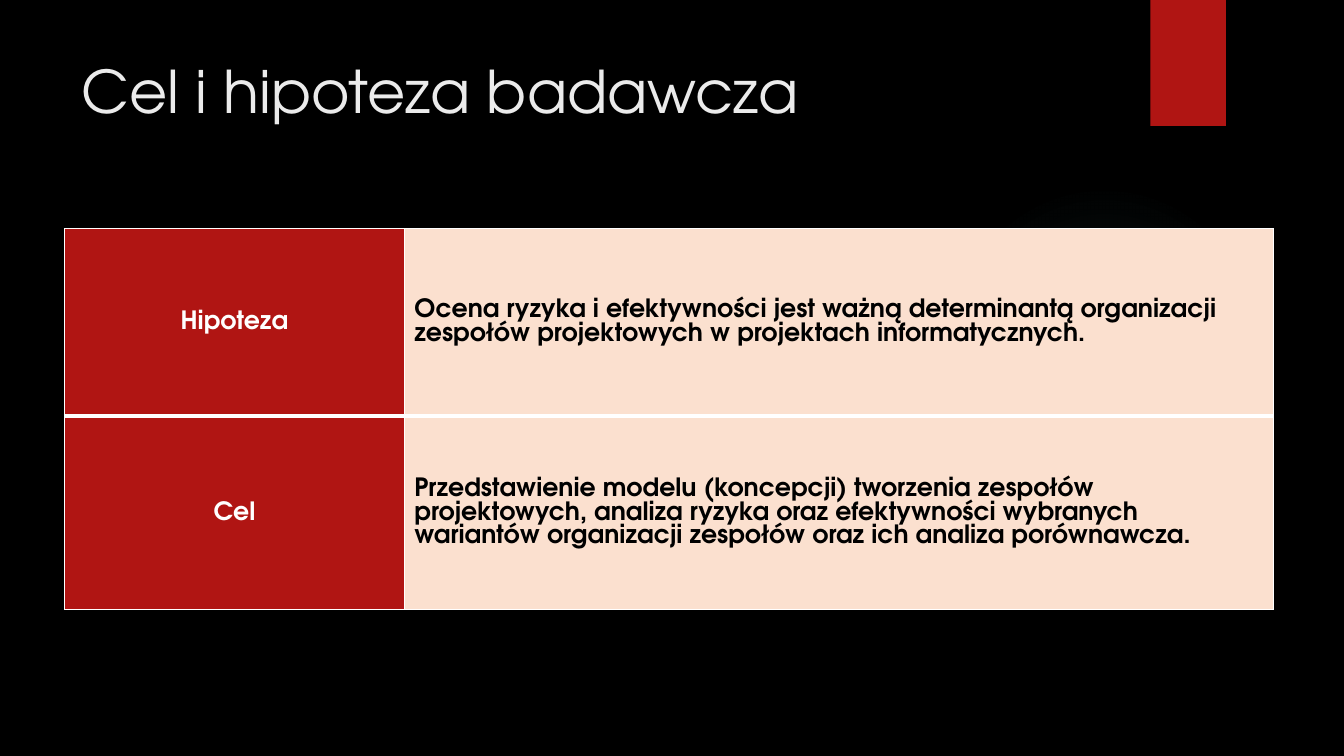
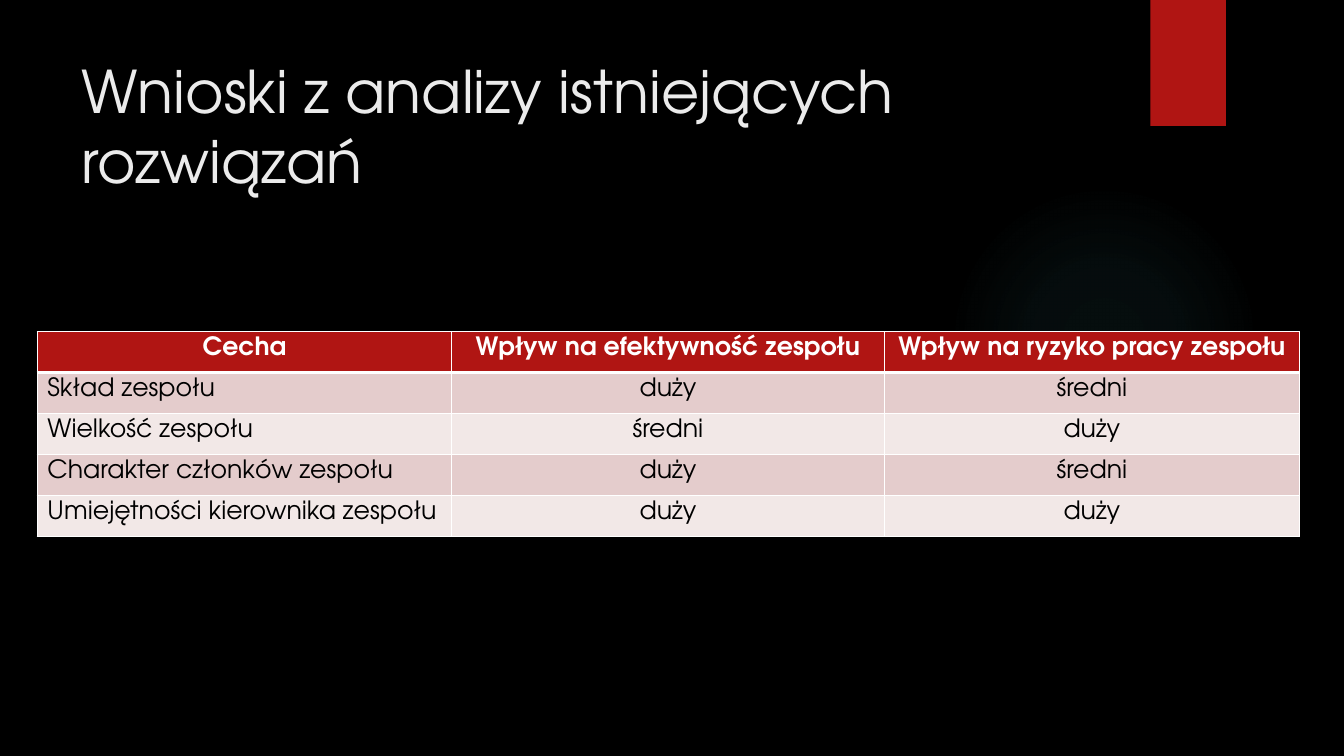
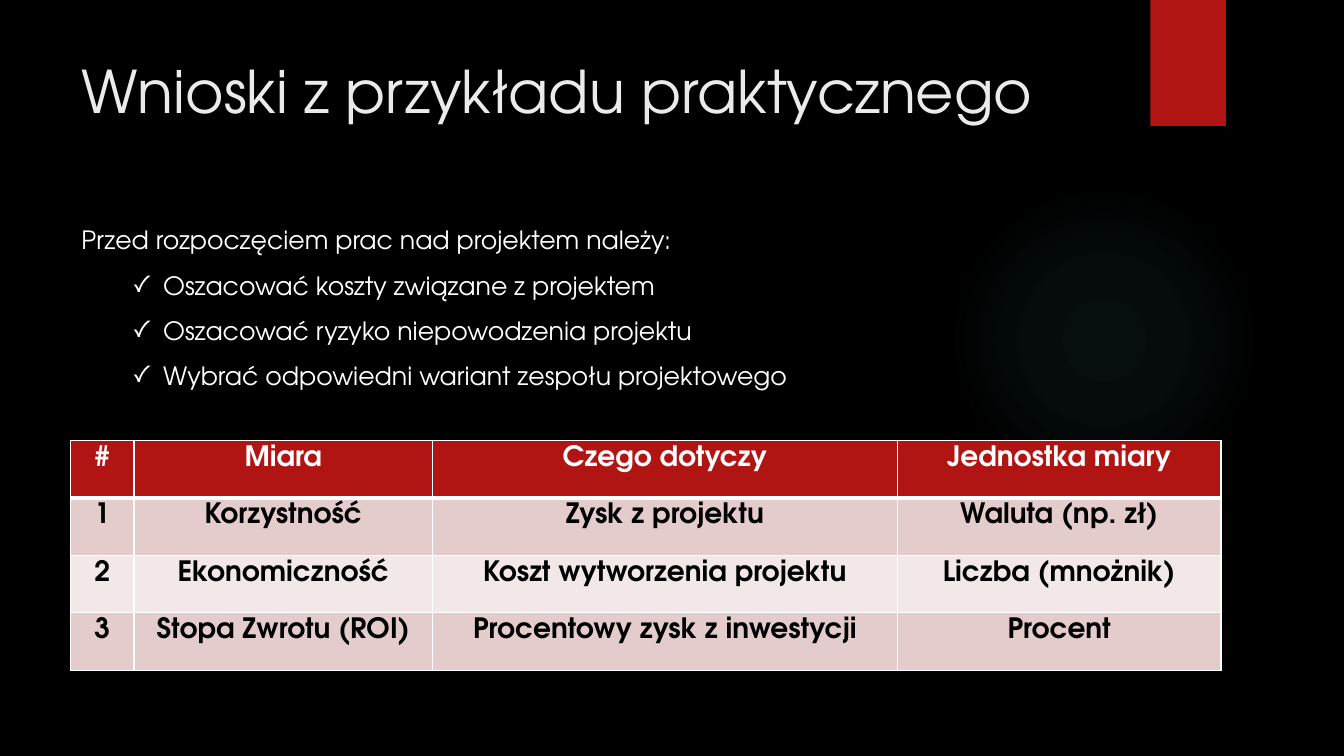
"""Build three slides on project team research with a shared dark theme."""
from pptx import Presentation
from pptx import util as u
from pptx.dml.color import RGBColor
from pptx.enum import shapes, text
from pptx.oxml import parse_xml
from pptx.oxml.ns import nsdecls

FONT = "TeX Gyre Adventor"
BLACK = RGBColor(0x00, 0x00, 0x00)
WHITE = RGBColor(0xFF, 0xFF, 0xFF)
TITLE_GREY = RGBColor(0xEB, 0xEB, 0xEB)
RED = RGBColor(0xB0, 0x15, 0x13)
PEACH = RGBColor(0xFB, 0xE0, 0xCF)
BAND_DARK = RGBColor(0xE4, 0xCC, 0xCC)
BAND_LIGHT = RGBColor(0xF2, 0xE8, 0xE7)
GLOW = RGBColor(0x50, 0xB9, 0xC1)
GLOW_STOPS = ((0, 7), (36, 6), (69, 0))
CENTER = text.PP_ALIGN.CENTER
LEFT = text.PP_ALIGN.LEFT


def box(left, top, width, height):
    return [u.Inches(value) for value in (left, top, width, height)]


def style(paragraph, size, color, bold=False):
    paragraph.font.name = FONT
    paragraph.font.size = u.Pt(size)
    paragraph.font.bold = bold
    paragraph.font.color.rgb = color


def add_plain_shape(slide, kind, bounds, color):
    shape = slide.shapes.add_shape(kind, *box(*bounds))
    shape.shadow.inherit = False
    shape.fill.solid()
    shape.fill.fore_color.rgb = color
    shape.line.fill.background()
    return shape


def add_glow(slide):
    shape = add_plain_shape(slide, shapes.MSO_SHAPE.OVAL, (9.41, 1.83, 3.08, 3.08), GLOW)
    stops = "".join(
        f'<a:gs pos="{position * 1000}"><a:srgbClr val="{GLOW}">'
        f'<a:alpha val="{alpha * 1000}"/></a:srgbClr></a:gs>'
        for position, alpha in GLOW_STOPS
    )
    gradient = parse_xml(
        f'<a:gradFill {nsdecls("a")}><a:gsLst>{stops}</a:gsLst><a:path path="circle">'
        '<a:fillToRect l="50000" t="50000" r="50000" b="50000"/></a:path></a:gradFill>'
    )
    properties = shape.element.spPr
    properties.replace(properties.find("{*}solidFill"), gradient)


def add_text_frame(slide, bounds):
    frame = slide.shapes.add_textbox(*box(*bounds)).text_frame
    frame.word_wrap = True
    return frame


def add_themed_slide(presentation, title):
    slide = presentation.slides.add_slide(presentation.slide_layouts[6])
    slide.background.fill.solid()
    slide.background.fill.fore_color.rgb = BLACK
    add_glow(slide)
    add_plain_shape(slide, shapes.MSO_SHAPE.RECTANGLE, (11.41, 0, 0.75, 1.25), RED)
    paragraph = add_text_frame(slide, (0.71, 0.49, 10.29, 1.53)).paragraphs[0]
    paragraph.text = title
    style(paragraph, 42, TITLE_GREY)
    return slide


def set_borders(cell, top, bottom):
    properties = cell._tc.get_or_add_tcPr()
    for index, (side, width) in enumerate((("L", 1), ("R", 1), ("T", top), ("B", bottom))):
        properties.insert(index, parse_xml(
            f'<a:ln{side} {nsdecls("a")} w="{u.Pt(width)}"><a:solidFill>'
            f'<a:srgbClr val="{WHITE}"/></a:solidFill></a:ln{side}>'
        ))


def fill_cell(cell, content, fill, color, size, bold, align):
    cell.fill.solid()
    cell.fill.fore_color.rgb = fill
    paragraph = cell.text_frame.paragraphs[0]
    paragraph.text = content
    paragraph.alignment = align
    style(paragraph, size, color, bold)


def add_table(slide, left, top, widths, heights, rows, cell_format):
    table = slide.shapes.add_table(
        len(rows), len(widths), *box(left, top, sum(widths), sum(heights))).table
    table.first_row = table.horz_banding = False
    for column, width in zip(table.columns, widths):
        column.width = u.Inches(width)
    for i, (height, contents) in enumerate(zip(heights, rows)):
        table.rows[i].height = u.Inches(height)
        for j, content in enumerate(contents):
            cell = table.cell(i, j)
            fill_cell(cell, content, *cell_format(i, j))
            set_borders(cell, 3 if i == 1 else 1, 3 if i == 0 else 1)
    return table


def label_format(row, column):
    if column == 0:
        return RED, WHITE, 18, True, CENTER
    return PEACH, BLACK, 18, True, LEFT


def banded_format(size, bold_body, first_align):
    def cell_format(row, column):
        if row == 0:
            return RED, WHITE, size, True, CENTER
        fill = BAND_DARK if row % 2 else BAND_LIGHT
        return fill, BLACK, size, bold_body, CENTER if column else first_align
    return cell_format


def add_checklist(slide, bounds, intro, items):
    frame = add_text_frame(slide, bounds)
    for index, content in enumerate([intro, *items]):
        paragraph = frame.add_paragraph() if index else frame.paragraphs[0]
        paragraph.text = content
        paragraph.line_spacing = 1.5
        if index:
            paragraph.level = 1
            properties = paragraph._p.get_or_add_pPr()
            properties.set("marL", str(u.Inches(0.81)))
            properties.set("indent", str(u.Inches(-0.31)))
            properties.append(parse_xml(f'<a:buFont {nsdecls("a")} typeface="{FONT}"/>'))
            properties.append(parse_xml(f'<a:buChar {nsdecls("a")} char="✓"/>'))
        style(paragraph, 18, WHITE)


def build_goal_slide(presentation):
    slide = add_themed_slide(presentation, "Cel i hipoteza badawcza")
    rows = [
        ("Hipoteza", "Ocena ryzyka i efektywności jest ważną determinantą organizacji "
                     "zespołów projektowych w projektach informatycznych."),
        ("Cel", "Przedstawienie modelu (koncepcji) tworzenia zespołów projektowych, "
                "analiza ryzyka oraz efektywności wybranych wariantów organizacji "
                "zespołów oraz ich analiza porównawcza."),
    ]
    table = add_table(slide, 0.64, 2.27, (3.37, 8.62), (1.86, 1.92), rows, label_format)
    for cell in table.iter_cells():
        cell.vertical_anchor = text.MSO_ANCHOR.MIDDLE


def build_analysis_slide(presentation):
    slide = add_themed_slide(presentation, "Wnioski z analizy istniejących rozwiązań")
    rows = [
        ("Cecha", "Wpływ na efektywność zespołu", "Wpływ na ryzyko pracy zespołu"),
        ("Skład zespołu", "duży", "średni"),
        ("Wielkość zespołu", "średni", "duży"),
        ("Charakter członków zespołu", "duży", "średni"),
        ("Umiejętności kierownika zespołu", "duży", "duży"),
    ]
    add_table(slide, 0.37, 3.29, (4.11, 4.29, 4.12), [2.03 / len(rows)] * len(rows), rows,
              banded_format(18, False, LEFT))


def build_example_slide(presentation):
    slide = add_themed_slide(presentation, "Wnioski z przykładu praktycznego")
    rows = [
        ("#", "Miara", "Czego dotyczy", "Jednostka miary"),
        ("1", "Korzystność", "Zysk z projektu", "Waluta (np. zł)"),
        ("2", "Ekonomiczność", "Koszt wytworzenia projektu", "Liczba (mnożnik)"),
        ("3", "Stopa Zwrotu (ROI)", "Procentowy zysk z inwestycji", "Procent"),
    ]
    add_table(slide, 0.7, 4.37, (0.63, 2.96, 4.61, 3.21), [0.57] * len(rows), rows,
              banded_format(20, True, CENTER))
    add_checklist(slide, (0.71, 2.03, 11.39, 1.86),
                  "Przed rozpoczęciem prac nad projektem należy:",
                  ["Oszacować koszty związane z projektem",
                   "Oszacować ryzyko niepowodzenia projektu",
                   "Wybrać odpowiedni wariant zespołu projektowego"])


def main():
    presentation = Presentation()
    presentation.slide_width = u.Inches(13.33)
    presentation.slide_height = u.Inches(7.5)
    build_goal_slide(presentation)
    build_analysis_slide(presentation)
    build_example_slide(presentation)
    presentation.save("out.pptx")


if __name__ == "__main__":
    main()
